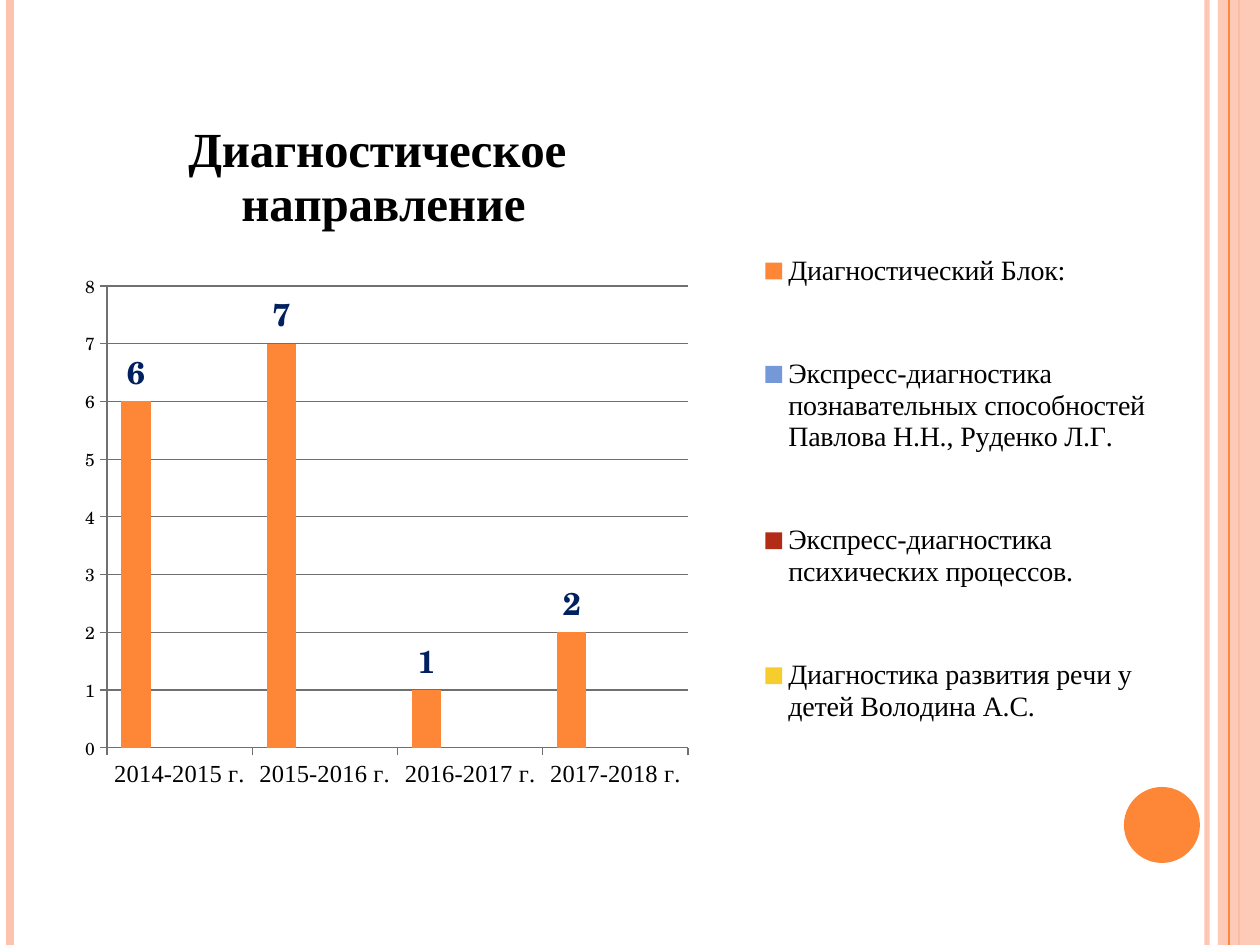
from lxml import etree
from pptx import Presentation
from pptx.chart.data import CategoryChartData
from pptx.dml.color import RGBColor
from pptx.enum.chart import XL_CHART_TYPE, XL_LABEL_POSITION, XL_LEGEND_POSITION, XL_TICK_MARK
from pptx.enum.shapes import MSO_CONNECTOR, MSO_SHAPE
from pptx.oxml import parse_xml
from pptx.oxml.ns import nsdecls, qn
from pptx.util import Pt

PX = 914400 // 126
WIDE, HIGH = 1260, 945

BLACK = RGBColor(0x00, 0x00, 0x00)
GREY = RGBColor(0x70, 0x70, 0x70)
NAVY = RGBColor(0x00, 0x20, 0x60)
PINK = RGBColor(0xFE, 0xC3, 0xAE)
ORANGE = RGBColor(0xFE, 0x86, 0x37)
BLUE = RGBColor(0x75, 0x98, 0xD9)
RED = RGBColor(0xB3, 0x2C, 0x16)
YELLOW = RGBColor(0xF5, 0xCD, 0x2D)

SERIF = "Times New Roman"
SCHOOL = "TeX Gyre Schola"

COLUMN = XL_CHART_TYPE.COLUMN_CLUSTERED
RIGHT = XL_LEGEND_POSITION.RIGHT
ABOVE = XL_LABEL_POSITION.OUTSIDE_END
CROSS = XL_TICK_MARK.OUTSIDE
STRAIGHT = MSO_CONNECTOR.STRAIGHT
RECT, OVAL = MSO_SHAPE.RECTANGLE, MSO_SHAPE.OVAL

TITLE = "Диагностическое \nнаправление"
YEARS = ["2014-2015 г.", "2015-2016 г.", "2016-2017 г.", "2017-2018 г."]
NONE = [None] * len(YEARS)
SERIES = [
    ("Диагностический Блок:", [6, 7, 1, 2], ORANGE),
    ("Экспресс-диагностика познавательных способностей Павлова Н.Н., Руденко Л.Г.",
     NONE, BLUE),
    ("Экспресс-диагностика психических процессов.", NONE, RED),
    ("Диагностика развития речи у детей Володина А.С.", NONE, YELLOW),
]


def scale(*box):
    return [n * PX for n in box]


def style(font, size, color=BLACK, name=SERIF, bold=False):
    font.size = Pt(size)
    font.name = name
    font.bold = bold
    font.color.rgb = color


def fade(item, alpha):
    color = next(item._element.spPr.iter(qn("a:srgbClr")))
    etree.SubElement(color, qn("a:alpha")).set("val", str(alpha * 1000))


def add_line(slide, x, top, high, color, weight):
    line = slide.shapes.add_connector(STRAIGHT, *scale(x, top, x, top + high))
    line.line.color.rgb = color
    line.line.width = Pt(weight)
    etree.SubElement(line._element.spPr, qn("a:effectLst"))
    return line


def add_solid(slide, kind, box, color):
    shape = slide.shapes.add_shape(kind, *scale(*box))
    shape.shadow.inherit = False
    shape.fill.solid()
    shape.fill.fore_color.rgb = color
    shape.line.fill.background()
    return shape


def add_frame(slide, left, top, wide, high):
    right = left + wide
    fade(add_line(slide, right - 53, top, high, PINK, 3), 93)
    add_line(slide, left + 10, top, high, PINK, 4.5)
    add_line(slide, right - 21, top, high, ORANGE, 1.5)
    fade(add_solid(slide, RECT, (right - 42, top, 42, high), PINK), 87)
    add_line(slide, right - 31, top, high, ORANGE, 0.75)
    add_solid(slide, OVAL, (right - 136, top + 787, 76, 76), ORANGE)


def place(part, after, x, y, w=None, h=None, inner=False):
    for old in part.findall(qn("c:layout")):
        part.remove(old)
    target = '<c:layoutTarget val="inner"/>' if inner else ""
    sizes = f'<c:w val="{w}"/><c:h val="{h}"/>' if w else ""
    layout = parse_xml(
        f'<c:layout {nsdecls("c")}><c:manualLayout>{target}'
        '<c:xMode val="edge"/><c:yMode val="edge"/>'
        f'<c:x val="{x}"/><c:y val="{y}"/>{sizes}</c:manualLayout></c:layout>')
    if after is None:
        part.insert(0, layout)
    else:
        part.find(qn(after)).addnext(layout)


def add_head(chart):
    chart.has_title = True
    title = chart.chart_title
    title.include_in_layout = False
    title.text_frame.text = TITLE
    for para in title.text_frame.paragraphs:
        style(para.font, 28, bold=True)
    place(title._element, "c:tx", 0.11, 0.06)


def add_key(chart):
    chart.has_legend = True
    key = chart.legend
    key.position = RIGHT
    key.include_in_layout = False
    style(key.font, 16)
    place(key._element, "c:legendPos", 0.61, 0.14, 0.35, 0.75)


def set_axes(chart):
    years, count = chart.category_axis, chart.value_axis
    for axis in (years, count):
        axis.major_tick_mark = CROSS
        axis.format.line.color.rgb = GREY
        axis.format.line.width = Pt(0.75)
    style(years.tick_labels.font, 14)
    style(count.tick_labels.font, 10, name=SCHOOL)
    count.minimum_scale, count.maximum_scale = 0, 8
    count.major_unit = 1
    grid = count.major_gridlines.format.line
    grid.color.rgb = GREY
    grid.width = Pt(0.75)


def set_bars(plot):
    plot.gap_width = 100
    plot.overlap = 0
    plot.vary_by_categories = False
    for bars, (_, _, color) in zip(plot.series, SERIES):
        bars.format.fill.solid()
        bars.format.fill.fore_color.rgb = color
    labels = plot.series[0].data_labels
    labels.show_value = True
    labels.position = ABOVE
    style(labels.font, 18, NAVY, SCHOOL, True)


def add_graph(slide, *box):
    data = CategoryChartData()
    data.categories = YEARS
    for name, values, _ in SERIES:
        data.add_series(name, values)
    chart = slide.shapes.add_chart(COLUMN, *scale(*box), data).chart
    style(chart.font, 10, name=SCHOOL)
    add_head(chart)
    add_key(chart)
    set_axes(chart)
    set_bars(chart.plots[0])
    area = chart._chartSpace.chart.plotArea
    place(area, None, 0.042, 0.266, 0.509, 0.566, True)


def main():
    deck = Presentation()
    deck.slide_width, deck.slide_height = scale(WIDE, HIGH)
    slide = deck.slides.add_slide(deck.slide_layouts[6])
    add_frame(slide, 0, 0, WIDE, HIGH)
    add_graph(slide, 59, 69, 1142, 816)
    deck.save("out.pptx")


if __name__ == "__main__":
    main()
